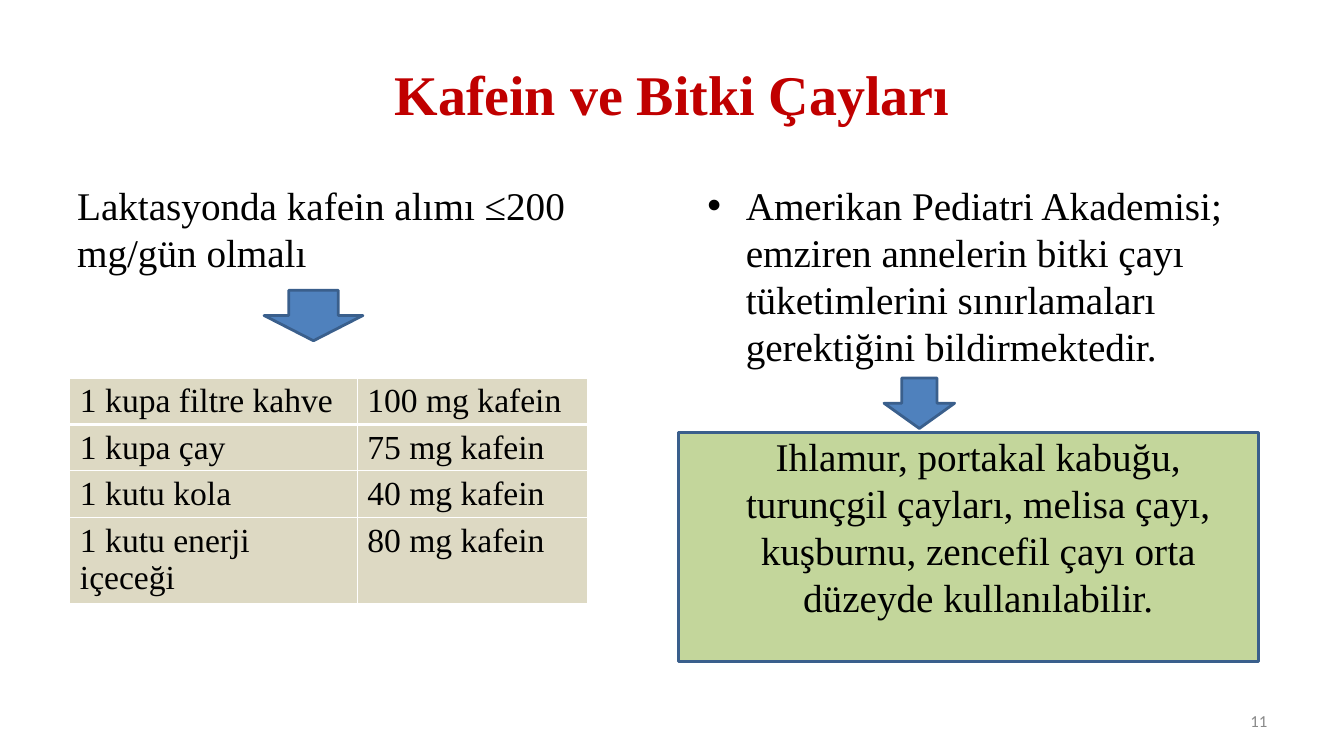
from dataclasses import dataclass
from lxml.etree import SubElement
from pptx import Presentation
from pptx.dml.color import RGBColor
from pptx.enum.shapes import MSO_SHAPE
from pptx.enum.text import MSO_ANCHOR, PP_ALIGN
from pptx.oxml.ns import qn
from pptx.util import Inches, Pt

TITLE = "Kafein ve Bitki Çayları"
CAFFEINE_LIMIT = "Laktasyonda kafein alımı ≤200 mg/gün olmalı"
CAFFEINE_SOURCES = [
    ("1 kupa filtre kahve", "100 mg kafein"),
    ("1 kupa çay", "75 mg kafein"),
    ("1 kutu kola", "40 mg kafein"),
    ("1 kutu enerji içeceği", "80 mg kafein"),
]
ACADEMY_ADVICE = (
    "Amerikan Pediatri Akademisi; emziren annelerin bitki çayı "
    "tüketimlerini sınırlamaları gerektiğini bildirmektedir."
)
HERBAL_TEAS = (
    "Ihlamur, portakal kabuğu, turunçgil çayları, melisa çayı, "
    "kuşburnu, zencefil çayı orta düzeyde kullanılabilir."
)
PAGE_NUMBER = "11"


@dataclass(frozen=True)
class Theme:
    heading: str = "C00000"
    ink: str = "000000"
    muted: str = "898989"
    arrow: str = "4F81BD"
    outline: str = "3A5F8C"
    tea: str = "C3D69B"
    cell: str = "DDD9C3"
    border: str = "FFFFFF"
    serif: str = "Times New Roman"
    sans: str = "Calibri"
    title_size: int = 40
    body_size: int = 28
    table_size: int = 24
    page_size: int = 12


THEME = Theme()
WIDTH, HEIGHT = Inches(13.33), Inches(7.5)

PLACES = {
    "title": (5, 4, 90, 16.67),
    "limit": (5, 23.33, 44.18, 14),
    "advice": (51.9, 23.33, 41.7, 26.5),
    "teas": (50.5, 57.2, 43.13, 30.27),
    "page": (71.7, 92.67, 23.33, 5.33),
    "limit arrow": (19.65, 38.4, 7.35, 6.67),
    "advice arrow": (65.78, 50, 5.25, 6.67),
}
TABLE_LEFT, TABLE_TOP, ROW_HEIGHT = 5.2, 50, 5.47
TABLE_COLUMNS = (21.38, 17.18)


def across(share):
    return round(WIDTH * share / 100)


def down(share):
    return round(HEIGHT * share / 100)


def place(name):
    left, top, width, height = PLACES[name]
    return across(left), down(top), across(width), down(height)


def write(frame, text, size=THEME.body_size, color=THEME.ink, font=THEME.serif,
          bold=False, align=PP_ALIGN.LEFT, anchor=MSO_ANCHOR.TOP, bullet=False):
    frame.word_wrap = True
    frame.vertical_anchor = anchor
    paragraph = frame.paragraphs[0]
    paragraph.alignment = align
    if bullet:
        properties = paragraph._p.get_or_add_pPr()
        properties.set("marL", str(Inches(0.38)))
        properties.set("indent", str(-Inches(0.38)))
        SubElement(properties, qn("a:buFont"), typeface="Arial")
        SubElement(properties, qn("a:buChar"), char="•")
    run = paragraph.add_run()
    run.text = text
    run.font.size = Pt(size)
    run.font.name = font
    run.font.bold = bold
    run.font.color.rgb = RGBColor.from_string(color)


def add_outlined(slide, kind, name, fill):
    shape = slide.shapes.add_shape(kind, *place(name))
    shape.shadow.inherit = False
    shape.fill.solid()
    shape.fill.fore_color.rgb = RGBColor.from_string(fill)
    shape.line.color.rgb = RGBColor.from_string(THEME.outline)
    shape.line.width = Pt(2)
    return shape


def border_cell(cell, bottom):
    properties = cell._tc.get_or_add_tcPr()
    for index, (side, points) in enumerate(
            (("lnL", 1), ("lnR", 1), ("lnT", 1), ("lnB", bottom))):
        edge = SubElement(properties, qn(f"a:{side}"), w=str(Pt(points)))
        fill = SubElement(edge, qn("a:solidFill"))
        SubElement(fill, qn("a:srgbClr"), val=THEME.border)
        properties.insert(index, edge)


def add_caffeine_table(slide):
    rows = len(CAFFEINE_SOURCES)
    table = slide.shapes.add_table(
        rows, len(TABLE_COLUMNS), across(TABLE_LEFT), down(TABLE_TOP),
        across(sum(TABLE_COLUMNS)), down(ROW_HEIGHT * rows)).table
    for column, share in zip(table.columns, TABLE_COLUMNS):
        column.width = across(share)
    for row, source in enumerate(CAFFEINE_SOURCES):
        table.rows[row].height = down(ROW_HEIGHT)
        for column, text in enumerate(source):
            cell = table.cell(row, column)
            cell.margin_bottom = Inches(0.01)
            cell.fill.solid()
            cell.fill.fore_color.rgb = RGBColor.from_string(THEME.cell)
            border_cell(cell, bottom=1 if row else 3)
            write(cell.text_frame, text, size=THEME.table_size)


def main():
    presentation = Presentation()
    presentation.slide_width, presentation.slide_height = WIDTH, HEIGHT
    slide = presentation.slides.add_slide(presentation.slide_layouts[5])

    title = slide.shapes.title
    title.left, title.top, title.width, title.height = place("title")
    write(title.text_frame, TITLE, size=THEME.title_size, color=THEME.heading,
          bold=True, align=PP_ALIGN.CENTER, anchor=MSO_ANCHOR.MIDDLE)

    teas = add_outlined(slide, MSO_SHAPE.RECTANGLE, "teas", THEME.tea)
    teas.text_frame.margin_left = Inches(0.29)
    teas.text_frame.margin_top = 0
    write(teas.text_frame, HERBAL_TEAS, align=PP_ALIGN.CENTER)

    limit = slide.shapes.add_textbox(*place("limit"))
    write(limit.text_frame, CAFFEINE_LIMIT)
    advice = slide.shapes.add_textbox(*place("advice"))
    write(advice.text_frame, ACADEMY_ADVICE, bullet=True)

    page = slide.shapes.add_textbox(*place("page"))
    write(page.text_frame, PAGE_NUMBER, size=THEME.page_size, color=THEME.muted,
          font=THEME.sans, align=PP_ALIGN.RIGHT, anchor=MSO_ANCHOR.MIDDLE)

    add_caffeine_table(slide)
    for arrow in ("limit arrow", "advice arrow"):
        add_outlined(slide, MSO_SHAPE.DOWN_ARROW, arrow, THEME.arrow)

    presentation.save("out.pptx")


if __name__ == "__main__":
    main()
